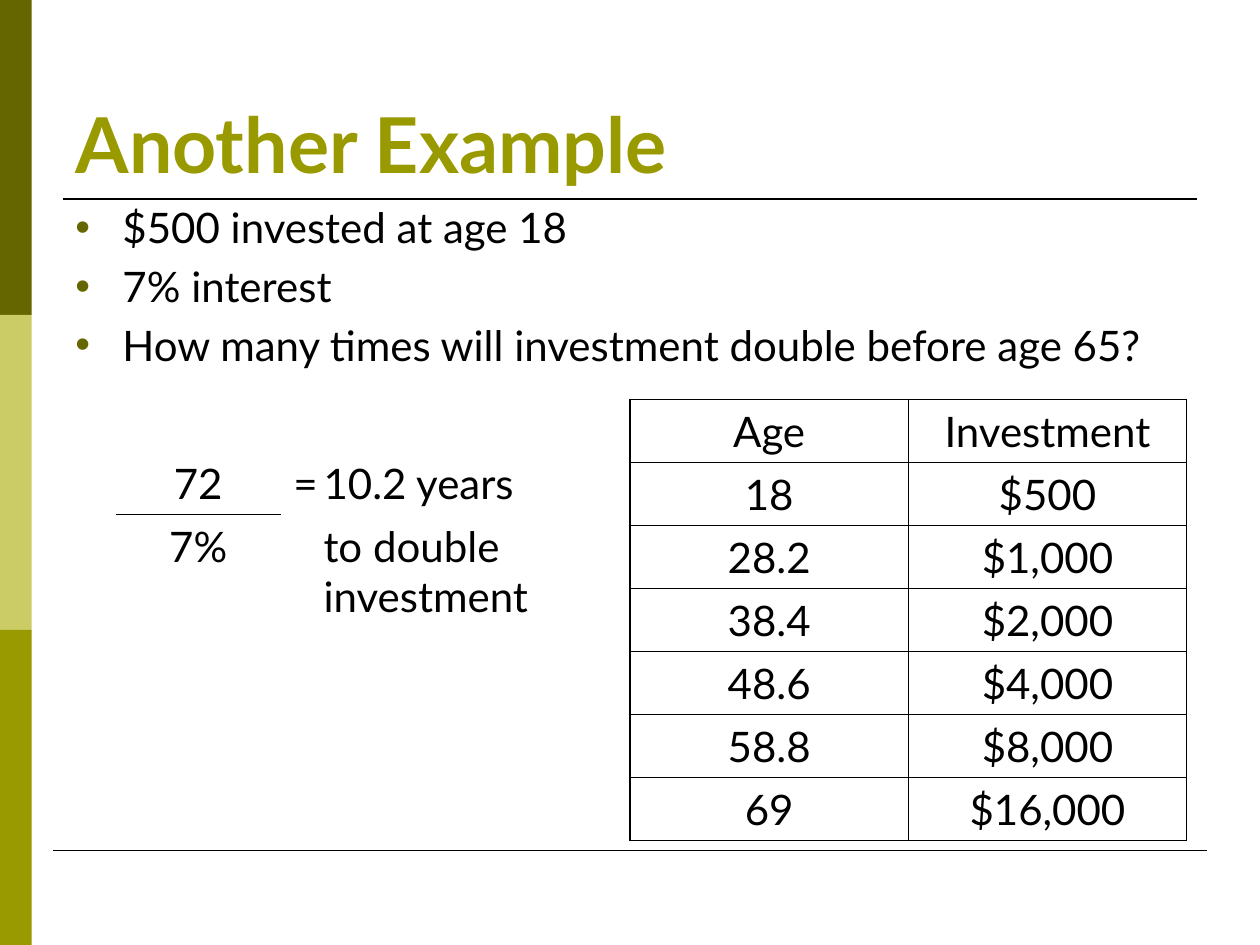
from lxml.etree import SubElement
from pptx import Presentation
from pptx.dml.color import RGBColor
from pptx.enum.shapes import MSO_CONNECTOR as Link, MSO_SHAPE as Form
from pptx.enum.text import MSO_ANCHOR as Anchor, PP_ALIGN as Align
from pptx.oxml.ns import qn
from pptx.util import Cm, Pt

# Content
TITLE = "Another Example"
POINTS = [
    "$500 invested at age 18",
    "7% interest",
    "How many times will investment double before age 65?",
]
RULE = [
    ("72", "=", "10.2 years"),
    ("7%", "", "to double investment"),
]
GROWTH = [
    ("Age", "Investment"),
    ("18", "$500"),
    ("28.2", "$1,000"),
    ("38.4", "$2,000"),
    ("48.6", "$4,000"),
    ("58.8", "$8,000"),
    ("69", "$16,000"),
]

# Look
FONT = "Lato"
BLACK = RGBColor(0x00, 0x00, 0x00)
DARK = RGBColor(0x66, 0x66, 0x00)
PALE = RGBColor(0xCC, 0xCC, 0x66)
OLIVE = RGBColor(0x99, 0x99, 0x00)
BANDS = [DARK, PALE, OLIVE]
LINES = [  # left, right, top, colour, width
    (1.27, 23.7, 4.01, OLIVE, 1.5),
    (1.27, 24.13, 4.01, BLACK, 1),
    (1.07, 24.33, 17.15, BLACK, 0.75),
]
WIDE, HIGH = 25.4, 19.05


def write(frame, lines, size=24, color=BLACK, bold=False, align=Align.LEFT,
          anchor=Anchor.TOP, bullet=None, gap=0):
    frame.word_wrap = True
    frame.vertical_anchor = anchor
    for i, line in enumerate(lines):
        para = frame.add_paragraph() if i else frame.paragraphs[0]
        para.alignment = align
        para.space_before = Pt(gap if i else 0)
        para.font.size = Pt(size)
        run = para.add_run()
        run.text = line
        font = run.font
        font.name, font.size, font.bold = FONT, Pt(size), bold
        font.color.rgb = color
        if bullet:
            props = para._p.get_or_add_pPr()
            props.set("marL", str(Cm(0.95)))
            props.set("indent", str(-Cm(0.95)))
            tint = SubElement(props, qn("a:buClr"))
            SubElement(tint, qn("a:srgbClr"), val=str(bullet))
            SubElement(props, qn("a:buFont"), typeface="Arial")
            SubElement(props, qn("a:buChar"), char="•")


def edge(cell, sides):
    props = cell._tc.get_or_add_tcPr()
    for side in "LRTB":
        shown = side in sides
        line = SubElement(props, qn("a:ln" + side), w=str(Pt(1) if shown else 0))
        if shown:
            fill = SubElement(line, qn("a:solidFill"))
            SubElement(fill, qn("a:srgbClr"), val=str(BLACK))
        else:
            SubElement(line, qn("a:noFill"))


def grid(slide, rows, left, top, widths, heights, sides, aligns):
    table = slide.shapes.add_table(
        len(rows), len(widths), Cm(left), Cm(top),
        Cm(sum(widths)), Cm(sum(heights))).table
    table.first_row = table.horz_banding = False
    for col, width in zip(table.columns, widths):
        col.width = Cm(width)
    for r, row in enumerate(rows):
        table.rows[r].height = Cm(heights[r])
        for c, text in enumerate(row):
            cell = table.cell(r, c)
            edge(cell, sides(r, c))
            cell.fill.background()
            write(cell.text_frame, [text], align=aligns[c])


def main():
    deck = Presentation()
    deck.slide_width, deck.slide_height = Cm(WIDE), Cm(HIGH)
    slide = deck.slides.add_slide(deck.slide_layouts[5])
    shapes = slide.shapes

    # Side bands
    step = HIGH / len(BANDS)
    for i, color in enumerate(BANDS):
        band = shapes.add_shape(Form.RECTANGLE, 0, Cm(i * step), Cm(0.64), Cm(step))
        band.shadow.inherit = False
        band.fill.solid()
        band.fill.fore_color.rgb = color
        band.line.fill.background()

    # Rules under the title and at the foot
    for left, right, top, color, width in LINES:
        line = shapes.add_connector(Link.STRAIGHT, Cm(left), Cm(top), Cm(right), Cm(top))
        line.line.color.rgb = color
        line.line.width = Pt(width)
        SubElement(line._element.spPr, qn("a:effectLst"))

    # Title and points
    title = shapes.title
    title.left, title.top, title.width, title.height = Cm(1.27), Cm(0.76), Cm(22.86), Cm(3.18)
    write(title.text_frame, [TITLE], size=44, color=OLIVE, bold=True, anchor=Anchor.BOTTOM)
    body = shapes.add_textbox(Cm(1.27), Cm(3.94), Cm(23.06), Cm(12.57))
    write(body.text_frame, POINTS, bullet=DARK, gap=4.8)

    # Rule of 72 as a fraction, then the growth table
    mid = Align.CENTER
    grid(slide, RULE, 2.33, 9.1, [3.33, 0.58, 6.05], [1.27, 2.29],
         lambda r, c: "" if c else "BT"[r], [mid, mid, Align.LEFT])
    grid(slide, GROWTH, 12.7, 8.05, [5.61] * 2, [1.27] * len(GROWTH),
         lambda r, c: "LRTB", [mid, mid])

    deck.save("out.pptx")


if __name__ == "__main__":
    main()
